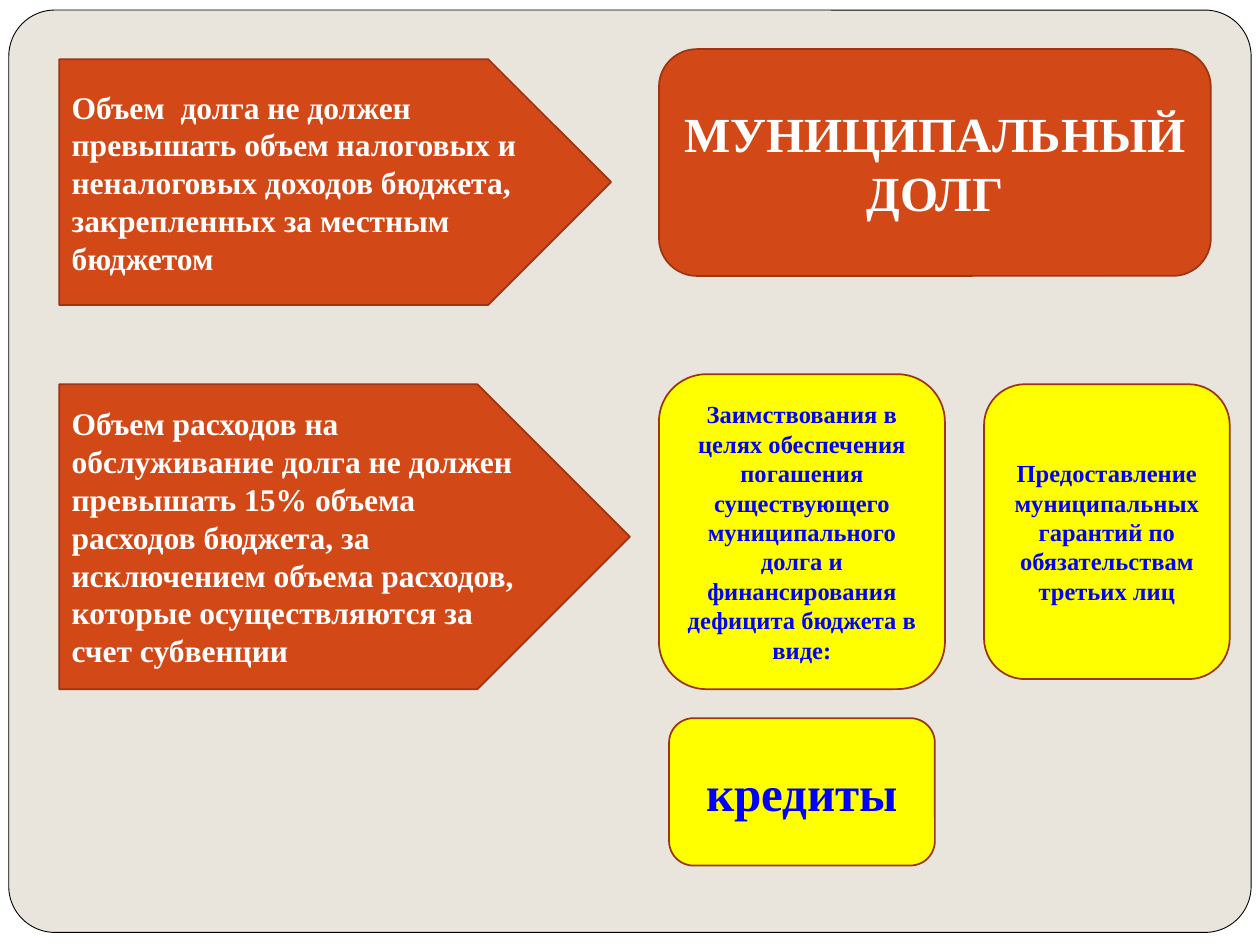
"""Build a slide on the limits and make-up of municipal debt."""
import pptx
import pptx.dml.color
import pptx.enum.shapes
import pptx.enum.text
import pptx.util

Inches = pptx.util.Inches
Pt = pptx.util.Pt
SHAPES = pptx.enum.shapes.MSO_SHAPE
ALIGN = pptx.enum.text.PP_ALIGN
ROUNDED, ARROW = SHAPES.ROUNDED_RECTANGLE, SHAPES.PENTAGON
ORANGE, YELLOW, BLUE, WHITE = "D34817", "FFFF00", "0000FF", "FFFFFF"
BROWN, BEIGE, BLACK = "9C3511", "E9E5DC", "000000"


def color(value):
    return pptx.dml.color.RGBColor.from_string(value)


def add_box(page, kind, place, fill, line, width):
    box = page.shapes.add_shape(kind, *[Inches(length) for length in place])
    box.shadow.inherit = False
    box.fill.solid()
    box.fill.fore_color.rgb = color(fill)
    box.line.color.rgb = color(line)
    box.line.width = Pt(width)
    return box


deck = pptx.Presentation()
deck.slide_width, deck.slide_height = Inches(10), Inches(7.5)
page = deck.slides.add_slide(deck.slide_layouts[6])
page.background.fill.solid()
page.background.fill.fore_color.rgb = color(WHITE)

panel = add_box(page, ROUNDED, (0.07, 0.08, 9.86, 7.32), BEIGE, BLACK, 0.5)
panel.adjustments[0] = 0.05

blocks = [
    (ROUNDED, (5.23, 0.39, 4.38, 1.8), ORANGE, WHITE, 28, "МУНИЦИПАЛЬНЫЙ ДОЛГ"),
    (ARROW, (0.47, 0.47, 4.38, 1.95), ORANGE, WHITE, 18,
     "Объем  долга не должен превышать объем налоговых и неналоговых "
     "доходов бюджета, закрепленных за местным бюджетом"),
    (ARROW, (0.47, 3.05, 4.53, 2.42), ORANGE, WHITE, 18,
     "Объем расходов на обслуживание долга не должен превышать 15% объема "
     "расходов бюджета, за исключением объема расходов, которые "
     "осуществляются за счет субвенции"),
    (ROUNDED, (5.23, 2.97, 2.27, 2.5), YELLOW, BLUE, 14,
     "Заимствования в целях обеспечения погашения существующего "
     "муниципального долга и финансирования дефицита бюджета в виде:"),
    (ROUNDED, (7.81, 3.05, 1.95, 2.34), YELLOW, BLUE, 14,
     "Предоставление муниципальных гарантий по обязательствам третьих лиц"),
    (ROUNDED, (5.31, 5.7, 2.11, 1.17), YELLOW, BLUE, 28, "кредиты"),
]

for kind, place, fill, ink, size, text in blocks:
    box = add_box(page, kind, place, fill, BROWN, 1)
    frame = box.text_frame
    frame.word_wrap = True
    frame.vertical_anchor = pptx.enum.text.MSO_ANCHOR.MIDDLE
    frame.text = text
    para = frame.paragraphs[0]
    para.alignment = ALIGN.LEFT if kind == ARROW else ALIGN.CENTER
    font = para.runs[0].font
    font.name = "Times New Roman"
    font.size = Pt(size)
    font.bold = True
    font.color.rgb = color(ink)

deck.save("out.pptx")
